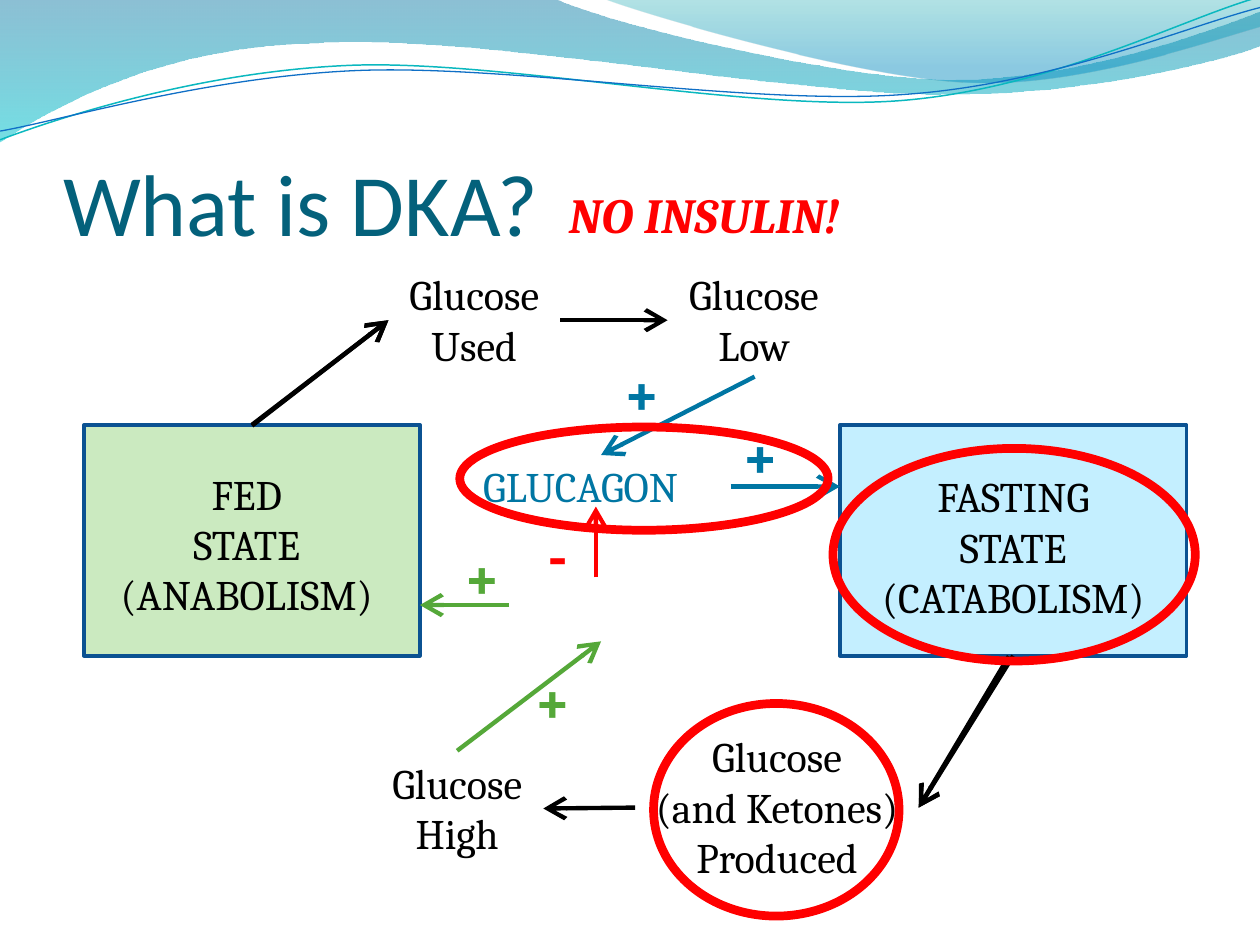
from lxml import etree
from pptx import Presentation
from pptx.dml.color import RGBColor
from pptx.enum.shapes import MSO_CONNECTOR, MSO_SHAPE
from pptx.enum.text import MSO_ANCHOR, MSO_AUTO_SIZE, PP_ALIGN
from pptx.oxml.ns import qn
from pptx.util import Pt

STRAIGHT = MSO_CONNECTOR.STRAIGHT
RECT, OVAL = MSO_SHAPE.RECTANGLE, MSO_SHAPE.OVAL
LEFT, CENTER = PP_ALIGN.LEFT, PP_ALIGN.CENTER
BOTTOM = MSO_ANCHOR.BOTTOM
GROW = MSO_AUTO_SIZE.SHAPE_TO_FIT_TEXT
TOP_SIDE, BOTTOM_SIDE = 0, 2

COLORS = {
    "title": "04617B", "black": "000000", "red": "FF0000", "blue": "0076A3",
    "green": "55A839", "fed": "CBEAC0", "fasting": "C4EFFF", "border": "0B5292",
    "wave_blue": "0074A1", "wave_cyan": "00C6CF", "wave_teal": "00A1A9",
    "wave_sky": "008BBF", "line_teal": "0AB8BF", "line_blue": "0F6FC6",
}

# Each wave is a start point, then lines (x, y) and cubic curves (6 numbers).
# Gradient stops are position, colour, opacity in percent.
BANDS = [
    ([(0, 0), (317, -0.7), (342.7, 12.2, 478.1, 45.4, 545.8, 45.4),
      (614.2, 45.4, 689.8, 18.7, 720, 6.5), (720.7, 25.9),
      (707.8, 31.7, 626.4, 54.7, 537.1, 54), (447.8, 54, 275, 20.2, 185, 24.5),
      (92.9, 25.9, 33.1, 59.8, -0.7, 81.4)],
     [(0, "wave_blue", 45), (1, "wave_cyan", 55)]),
    ([(345, -0.7), (366.5, 7.9, 491, 44.6, 553.7, 46.8),
      (616.3, 49.7, 691.9, 23, 720, 15.1), (720, 0)],
     [(0, "wave_teal", 30), (0.8, "wave_sky", 45)]),
]
WAVE_LINES = [
    ([(0, 79.9), (34.6, 67, 113.8, 41, 199.4, 37.4),
      (284.4, 33.8, 427, 64.1, 513.4, 57.6),
      (599.8, 51.1, 675.4, 10.8, 718.6, -1.4)],
     "line_teal", 0.85),
    ([(0, 74.9), (33.8, 69.1, 118.1, 43.9, 203.8, 40.3),
      (290.2, 36.7, 429.8, 60.5, 516.2, 54), (601.9, 48.2, 677.5, 15.1, 720, 4.3)],
     "line_blue", 0.75),
]
STATES = {  # box, label box, label
    "fed": ((48, 242.75, 192, 132), (54, 264, 174, 94.5), ["FED", "STATE", "(ANABOLISM)"]),
    "fasting": ((480, 242.75, 198, 132), (480, 265.5, 198, 94.5),
                ["FASTING", "STATE", "(CATABOLISM)"]),
}
STEPS = [
    ((222, 150, 98, 65.5), ["Glucose", "Used"]),
    ((381.8, 150, 98, 65.5), ["Glucose", "Low"]),
    ((363, 414, 162, 94.5), ["Glucose", "(and Ketones)", "Produced"]),
    ((212.5, 429.25, 97.5, 65.5), ["Glucose", "High"]),
]
SIGNS = [  # left, top, width, sign, colour
    (298, 373.75, 34.5, "+", "green"), (257.75, 303, 34.5, "+", "green"),
    (306, 291, 27.5, "-", "red"),
    (349, 198, 34.5, "+", "blue"), (416.75, 234, 34.5, "+", "blue"),
]
ARROWS = [  # start, end, colour
    ((320.25, 183), (381.5, 183), "black"), ((363, 461.5), (310.5, 462), "black"),
    ((576.5, 375), (525, 461.5), "black"), ((144, 243.25), (222, 183), "black"),
    ((291, 345.75), (240, 345.75), "green"), ((261.25, 429), (343.5, 366.5), "green"),
    ((340.5, 330), (340.5, 289.5), "red"),
    ((417.5, 278), (480, 278), "blue"), ((431.25, 215.25), (343.5, 260), "blue"),
]
RINGS = [(476, 256.25, 207, 121.5), (373.5, 402, 140.25, 121.5), (262.75, 244, 210.5, 59)]


def rgb(name):
    return RGBColor.from_string(COLORS[name])


def pts(values):
    return [Pt(v) for v in values]


def set_line(shape, color, width):
    shape.line.color.rgb = rgb(color)
    shape.line.width = Pt(width)


def write(tf, lines, color, align=CENTER, **font):
    """Fill a text frame with one paragraph per line."""
    values = {"name": "Cambria", "size": Pt(24), **font}
    for i, line in enumerate(lines):
        p = tf.paragraphs[0] if i == 0 else tf.add_paragraph()
        p.alignment = align
        r = p.add_run()
        r.text = line
        r.font.color.rgb = rgb(color)
        for name, value in values.items():
            setattr(r.font, name, value)


def add_text(s, box, lines, color="black", wrap=False, **kw):
    tf = s.shapes.add_textbox(*pts(box)).text_frame
    tf.word_wrap = wrap
    tf.auto_size = GROW
    write(tf, lines, color, **kw)


def add_wave(s, segments, close):
    """Build the outline through its end points, then bend the curved parts."""
    start, *ends = [pts(seg[-2:]) for seg in segments]
    builder = s.shapes.build_freeform(*start)
    builder.add_line_segments(ends, close=close)
    sp = builder.convert_to_shape()
    sp.shadow.inherit = False
    straight_parts = list(sp._element.iter(qn("a:lnTo")))
    for part, seg in zip(straight_parts, segments[1:]):
        if len(seg) == 6:
            curve = etree.Element(qn("a:cubicBezTo"))
            for x, y in zip(seg[::2], seg[1::2]):
                etree.SubElement(curve, qn("a:pt"), x=str(Pt(x) - sp.left),
                                 y=str(Pt(y) - sp.top))
            part.getparent().replace(part, curve)
    return sp


def add_band(s, segments, stops):
    sp = add_wave(s, segments, True)
    sp.line.fill.background()
    sp.fill.gradient()
    sp.fill.gradient_angle = 270
    for stop, (position, color, _) in zip(sp.fill.gradient_stops, stops):
        stop.position = position
        stop.color.rgb = rgb(color)
    tags = sp._element.spPr.iter(qn("a:srgbClr"))
    for tag, (_, _, opacity) in zip(tags, stops):
        etree.SubElement(tag, qn("a:alpha"), val=str(opacity * 1000))


def add_wave_line(s, segments, color, width):
    sp = add_wave(s, segments, False)
    sp.fill.background()
    set_line(sp, color, width)


def add_outlined(s, kind, box, color, width, fill=None):
    sp = s.shapes.add_shape(kind, *pts(box))
    sp.shadow.inherit = False
    set_line(sp, color, width)
    if fill:
        sp.fill.solid()
        sp.fill.fore_color.rgb = rgb(fill)
    else:
        sp.fill.background()
    return sp


def add_arrow(s, start, end, color):
    line = s.shapes.add_connector(STRAIGHT, *pts(start + end))
    set_line(line, color, 2.5)
    etree.SubElement(line.line._get_or_add_ln(), qn("a:tailEnd"),
                     type="arrow", w="lg", len="lg")
    etree.SubElement(line._element.spPr, qn("a:effectLst"))
    return line


def add_title(s, text):
    title = s.shapes.title
    title.left, title.top, title.width, title.height = pts((36, 55.25, 648, 90))
    tf = title.text_frame
    frame = {"vertical_anchor": BOTTOM, "margin_left": 0, "margin_right": 0,
             "margin_bottom": 0}
    for name, value in frame.items():
        setattr(tf, name, value)
    write(tf, [text], "title", LEFT, name="Calibri", size=Pt(50))


def main():
    prs = Presentation()
    prs.slide_width, prs.slide_height = Pt(720), Pt(540)
    s = prs.slides.add_slide(prs.slide_layouts[5])
    for band in BANDS:
        add_band(s, *band)
    for wave_line in WAVE_LINES:
        add_wave_line(s, *wave_line)
    add_title(s, "What is DKA?")

    boxes = {}
    for state, (box, label_box, label) in STATES.items():
        boxes[state] = add_outlined(s, RECT, box, "border", 2, state)
        add_text(s, label_box, label, wrap=True)
    for box, label in STEPS:
        add_text(s, box, label)
    add_text(s, (269, 259.75, 148.5, 36), ["GLUCAGON"], "blue", align=LEFT)

    add_arrow(s, (144, 242.75), (222, 183), "black").begin_connect(
        boxes["fed"], TOP_SIDE)
    add_arrow(s, (579, 374.75), (525, 461.5), "black").begin_connect(
        boxes["fasting"], BOTTOM_SIDE)
    for arrow in ARROWS:
        add_arrow(s, *arrow)
    for left, top, width, sign, color in SIGNS:
        add_text(s, (left, top, width, 51), [sign], color, align=LEFT,
                 size=Pt(36), bold=True)
    for box in RINGS:
        add_outlined(s, OVAL, box, "red", 5)
    add_text(s, (318, 102, 194.5, 41), ["NO INSULIN!"], "red", align=LEFT,
             size=Pt(28), bold=True, italic=True)
    prs.save("out.pptx")


if __name__ == "__main__":
    main()
